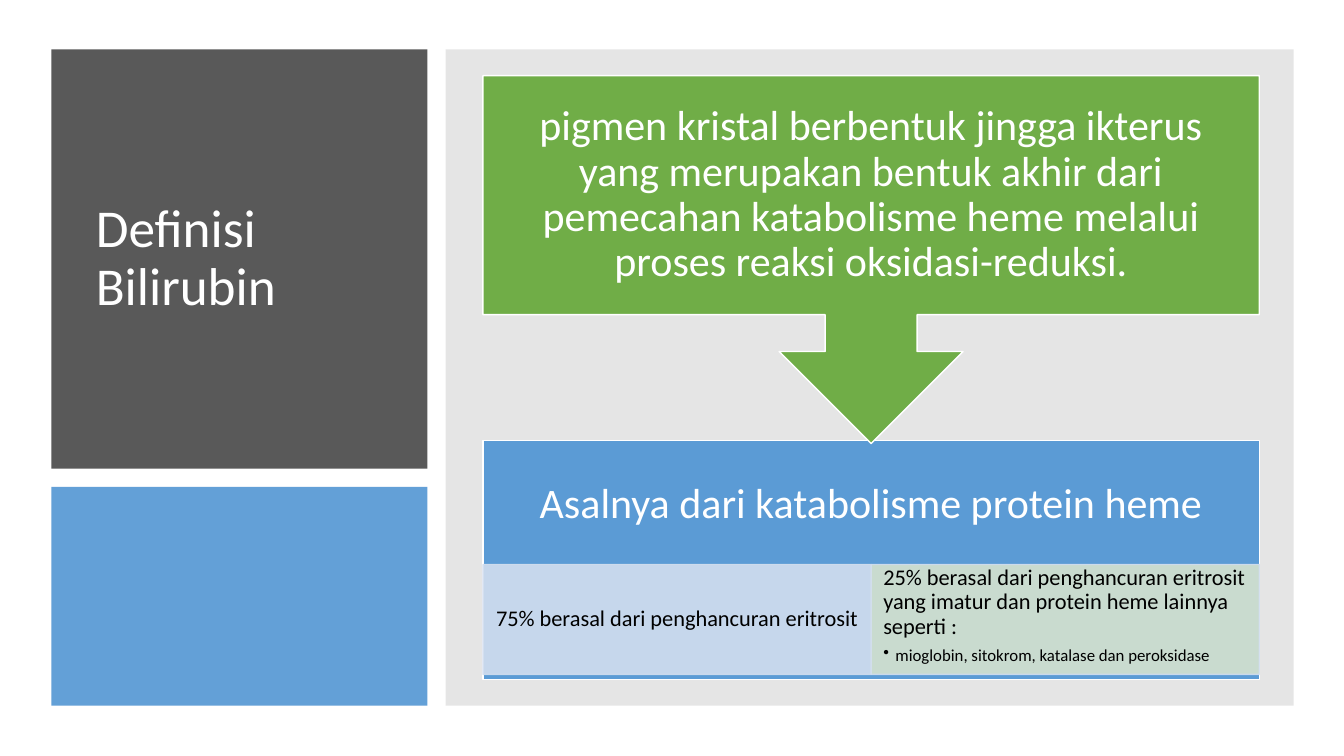
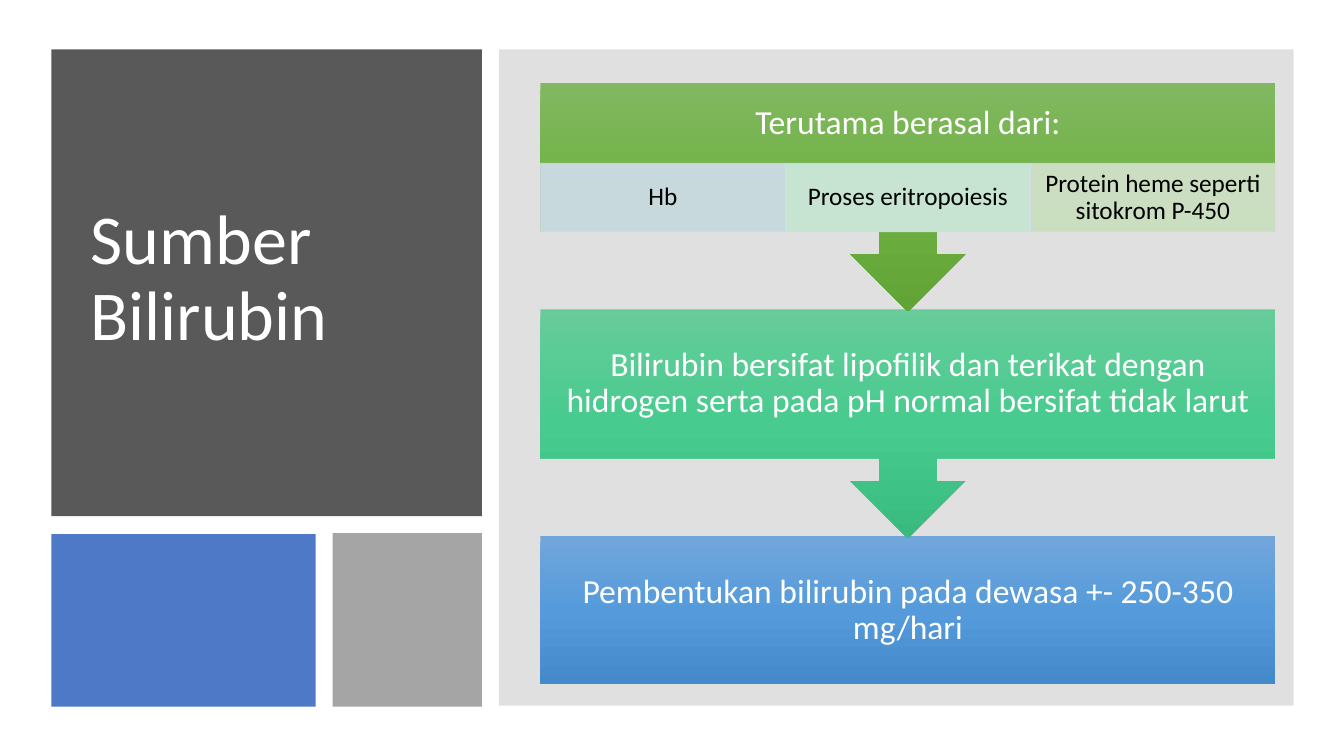
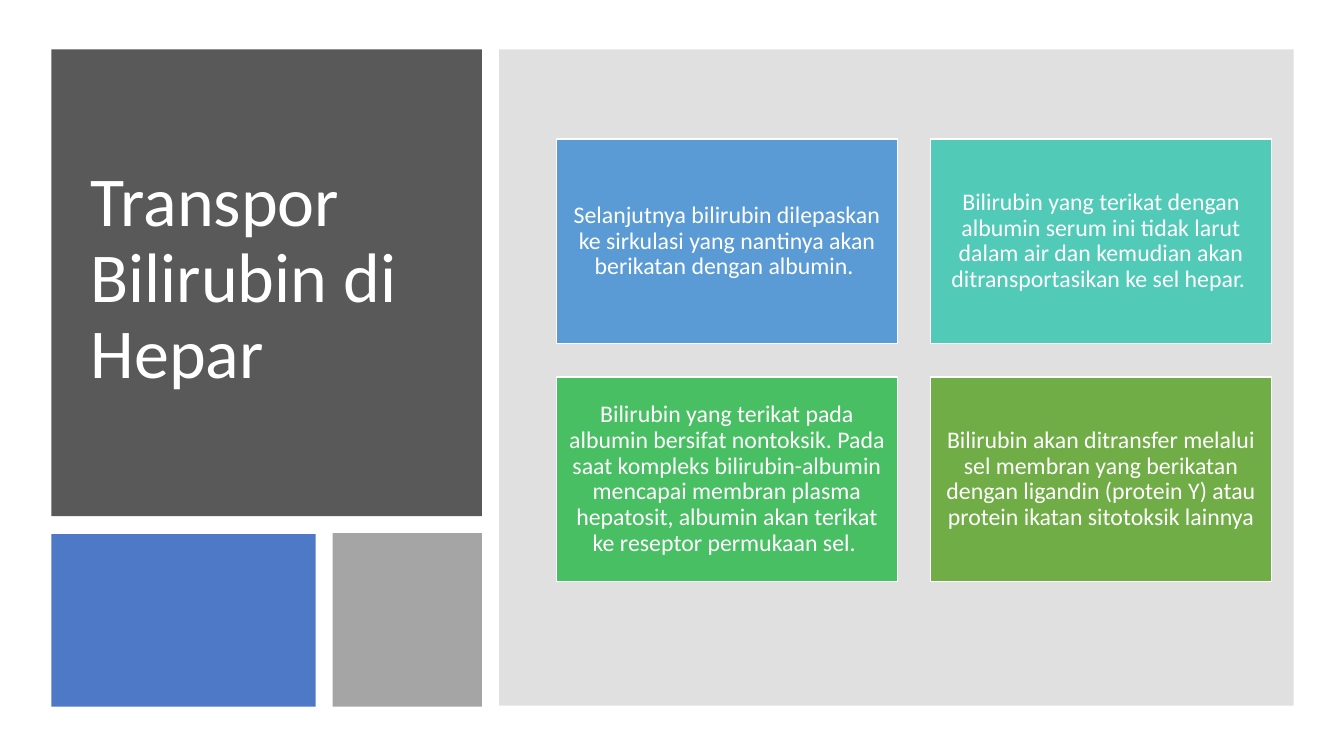
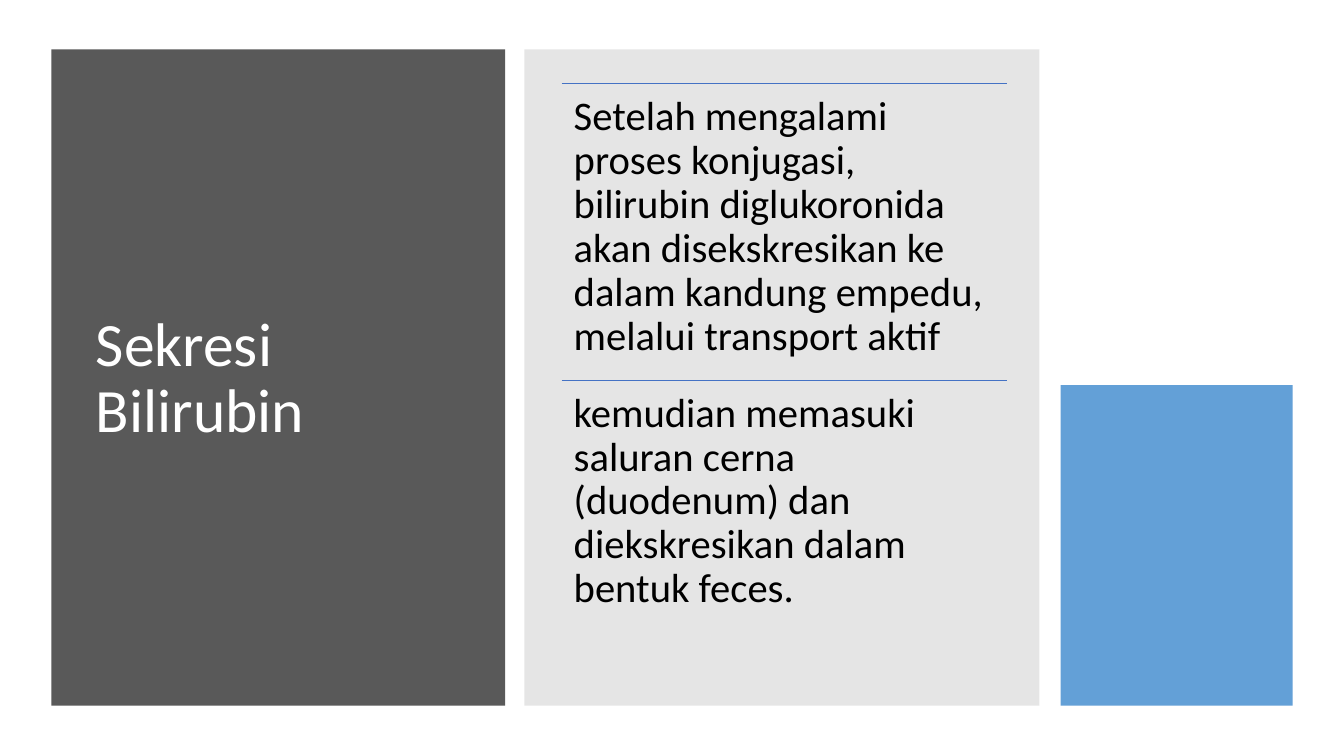
"""Builds four slides on the origin, transport and secretion of bilirubin."""
from copy import deepcopy
from dataclasses import dataclass

from pptx import Presentation
from pptx.dml.color import RGBColor as RGB
from pptx.enum.shapes import MSO_CONNECTOR as LINK, MSO_SHAPE as FORM
from pptx.enum.text import MSO_ANCHOR as ANCHOR, MSO_AUTO_SIZE as FIT, PP_ALIGN as ALIGN
from pptx.oxml.ns import qn
from pptx.oxml.xmlchemy import OxmlElement as make
from pptx.util import Inches, Pt


@dataclass(frozen=True)
class Theme:
    font: str = "Calibri"
    white: str = "FFFFFF"
    black: str = "000000"
    dark: str = "595959"
    ash: str = "808080"
    grey: str = "A5A5A5"
    blue: str = "5B9BD5"
    navy: str = "4472C4"
    green: str = "70AD47"
    teal: str = "52CAB8"
    leaf: str = "49BF64"
    pale: str = "D2DEEF"
    mint: str = "D0EAE1"
    sage: str = "D5E3CF"
    skies: tuple = ("71A6DB", "559BDB", "448ACA")
    jades: tuple = ("67CC9A", "47CB8E", "39BB7F")
    limes: tuple = ("81B861", "6FB242", "62A336")
    large: int = 50
    wide: int = 44
    head: int = 38
    lead: int = 30
    body: int = 29
    step: int = 24
    cell: int = 18
    card: int = 17
    note: int = 16
    tiny: int = 12


LOOK = Theme()
LEFT, TOP, TALL = 0.51, 0.49, 6.51


def write(frame, text, size, color=LOOK.white, align=ALIGN.CENTER,
          anchor=ANCHOR.MIDDLE, inset=(0.1, 0.05, 0.1, 0.05), bullet=None):
    frame.word_wrap = True
    frame.auto_size = FIT.NONE
    frame.vertical_anchor = anchor
    (frame.margin_left, frame.margin_top,
     frame.margin_right, frame.margin_bottom) = map(Inches, inset)
    lines = [(text, size)] + ([(bullet, LOOK.tiny)] if bullet else [])
    for row, (words, points) in enumerate(lines):
        para = frame.add_paragraph() if row else frame.paragraphs[0]
        para.alignment, para.line_spacing = align, 0.9
        para.space_after = Pt(0.35 * points)
        run = para.add_run()
        run.text = words
        run.font.name, run.font.size = LOOK.font, Pt(points)
        run.font.color.rgb = RGB.from_string(color)
        if row:
            props = para._p.get_or_add_pPr()
            props.set("marL", str(Inches(0.12)))
            props.set("indent", str(Inches(-0.12)))
            mark = make("a:buChar")
            mark.set("char", "•")
            props.append(mark)


class Deck:
    def __init__(self):
        self.show = Presentation()
        self.show.slide_width, self.show.slide_height = Inches(13.33), Inches(7.5)
        self.slide = None

    def page(self, title, size, panel, place):
        self.slide = self.show.slides.add_slide(self.show.slide_layouts[5])
        head = self.slide.shapes.title
        head.left, head.top, head.width, head.height = map(Inches, place)
        write(head.text_frame, title, size, align=ALIGN.LEFT)
        back = self.box((LEFT, TOP, *panel), LOOK.dark)
        head._element.addprevious(back._element)

    def tiled(self, title):
        self.page(title, LOOK.large, (4.27, 4.63), (0.8, 1.22, 3.68, 3.11))
        self.box((LEFT, 5.3, 2.62, 1.71), LOOK.navy, alpha=95)
        self.box((4.95, TOP, 7.88, TALL), LOOK.ash, alpha=24)
        self.box((3.3, 5.29, 1.48, 1.72), LOOK.grey)

    def box(self, place, fill, edge=None, weight=1, alpha=None, form=FORM.RECTANGLE):
        shape = self.slide.shapes.add_shape(form, *map(Inches, place))
        shape.shadow.inherit = False
        props = shape._element.spPr
        if isinstance(fill, tuple):
            shape.fill.gradient()
            shape.fill.gradient_angle = 270
            stops = props.find(".//" + qn("a:gsLst"))
            stops.insert(1, deepcopy(stops[0]))
            for row, (stop, tone) in enumerate(zip(shape.fill.gradient_stops, fill)):
                stop.color.rgb, stop.position = RGB.from_string(tone), row / 2
        else:
            shape.fill.solid()
            shape.fill.fore_color.rgb = RGB.from_string(fill)
        if edge:
            shape.line.color.rgb = RGB.from_string(edge)
            shape.line.width = Pt(weight)
        else:
            shape.line.fill.background()
        if alpha:
            for tone in props.iter(qn("a:srgbClr")):
                clear = make("a:alpha")
                clear.set("val", str(alpha * 1000))
                tone.append(clear)
        return shape

    def step(self, place, fill, text, size, pad, edge=None, arrow=True, foot=0):
        form = FORM.DOWN_ARROW_CALLOUT if arrow else FORM.RECTANGLE
        shape = self.box(place, fill, edge, form=form)
        write(shape.text_frame, text, size, inset=(pad, pad, pad, pad + foot))

    def cell(self, place, fill, text, size, pad, weight, **style):
        shape = self.box(place, fill, LOOK.pale, weight, 90)
        side, rise = pad
        write(shape.text_frame, text, size, LOOK.black,
              inset=(side, rise, side, rise), **style)

    def rule(self, left, top, width):
        line = self.slide.shapes.add_connector(
            LINK.STRAIGHT, *map(Inches, (left, top, left + width, top)))
        line.line.color.rgb, line.line.width = RGB.from_string(LOOK.navy), Pt(0.5)
        line._element.spPr.append(make("a:effectLst"))

    def note(self, place, text):
        shape = self.slide.shapes.add_textbox(*map(Inches, place))
        write(shape.text_frame, text, LOOK.body, LOOK.black, ALIGN.LEFT,
              ANCHOR.TOP, (0.12,) * 4)


def define(deck):
    deck.page("Definisi Bilirubin", LOOK.head, (3.73, 4.16), (0.85, 0.8, 3.11, 3.54))
    deck.box((LEFT, 4.83, 3.73, 2.17), LOOK.blue, alpha=95)
    deck.box((4.42, TOP, 8.41, TALL), LOOK.ash, alpha=20)
    left, width = 4.79, 7.7
    half = width / 2
    deck.step((left, 4.37, width, 2.37), LOOK.blue,
              "Asalnya dari katabolisme protein heme", LOOK.lead, 0.23,
              LOOK.white, arrow=False, foot=1.09)
    deck.cell((left, 5.6, half, 1.09), LOOK.pale,
              "75% berasal dari penghancuran eritrosit ", LOOK.note, (0.12, 0.02), 1)
    deck.cell((left + half, 5.6, half, 1.09), LOOK.sage,
              "25% berasal dari penghancuran eritrosit yang imatur dan protein heme "
              "lainnya seperti :", LOOK.note, (0.12, 0.02), 1,
              align=ALIGN.LEFT, anchor=ANCHOR.TOP,
              bullet="mioglobin, sitokrom, katalase dan peroksidase")
    deck.step((left, 0.75, width, 3.65), LOOK.green,
              "pigmen kristal berbentuk jingga ikterus yang merupakan bentuk akhir dari "
              "pemecahan katabolisme heme melalui proses reaksi oksidasi-reduksi.",
              LOOK.lead, 0.23, LOOK.white)


def source(deck):
    deck.tiled("Sumber Bilirubin")
    left, width, top, pitch = 5.36, 7.29, 0.82, 2.25
    steps = [
        (LOOK.limes, "Terutama berasal dari:", 2.27, 0.67),
        (LOOK.jades, "Bilirubin bersifat lipofilik dan terikat dengan hidrogen serta "
                     "pada pH normal bersifat tidak larut", 2.27, 0),
        (LOOK.skies, "Pembentukan bilirubin pada dewasa +- 250-350 mg/hari", 1.47, 0),
    ]
    for row, (fill, text, tall, foot) in reversed(list(enumerate(steps))):
        deck.step((left, top + row * pitch, width, tall), fill, text, LOOK.step, 0.19,
                  arrow=row < 2, foot=foot)
    cells = [(LOOK.pale, "Hb"), (LOOK.mint, "Proses eritropoiesis"),
             (LOOK.sage, "Protein heme seperti sitokrom P-450")]
    third = width / 3
    for col, (fill, text) in enumerate(cells):
        deck.cell((left + col * third, 1.62, third, 0.68), fill, text,
                  LOOK.cell, (0.14, 0.03), 0.5)


def carry(deck):
    deck.tiled("Transpor Bilirubin di Hepar")
    cards = [
        (LOOK.blue, "Selanjutnya bilirubin dilepaskan ke sirkulasi yang nantinya akan "
                    "berikatan dengan albumin. "),
        (LOOK.teal, "Bilirubin yang terikat dengan albumin serum ini tidak larut dalam "
                    "air dan kemudian akan ditransportasikan ke sel hepar. "),
        (LOOK.leaf, "Bilirubin yang terikat pada albumin bersifat nontoksik. Pada saat "
                    "kompleks bilirubin-albumin mencapai membran plasma hepatosit, "
                    "albumin akan terikat ke reseptor permukaan sel. "),
        (LOOK.green, "Bilirubin akan ditransfer melalui sel membran yang berikatan "
                     "dengan ligandin (protein Y) atau protein ikatan sitotoksik lainnya"),
    ]
    width, tall, gap = 3.38, 2.03, 0.33
    for spot, (fill, text) in enumerate(cards):
        row, col = divmod(spot, 2)
        place = (5.52 + col * (width + gap), 1.38 + row * (tall + gap), width, tall)
        deck.step(place, fill, text, LOOK.card, 0.07, LOOK.white, arrow=False)


def secrete(deck):
    deck.page("Sekresi Bilirubin", LOOK.wide, (4.5, TALL), (0.85, 0.83, 3.84, 5.87))
    deck.box((5.2, TOP, 5.11, TALL), LOOK.ash, alpha=20)
    deck.box((10.52, 3.82, 2.3, 3.18), LOOK.blue, alpha=95)
    left, width, tall = 5.57, 4.42, 2.94
    notes = [
        "Setelah mengalami proses konjugasi, bilirubin diglukoronida akan "
        "disekskresikan ke dalam kandung empedu, melalui transport aktif",
        "kemudian memasuki saluran cerna (duodenum) dan diekskresikan dalam bentuk feces.",
    ]
    for row, text in enumerate(notes):
        top = 0.83 + row * tall
        deck.rule(left, top, width)
        deck.note((left, top, width, tall), text)


def main():
    deck = Deck()
    for build in (define, source, carry, secrete):
        build(deck)
    deck.show.save("out.pptx")


if __name__ == "__main__":
    main()
